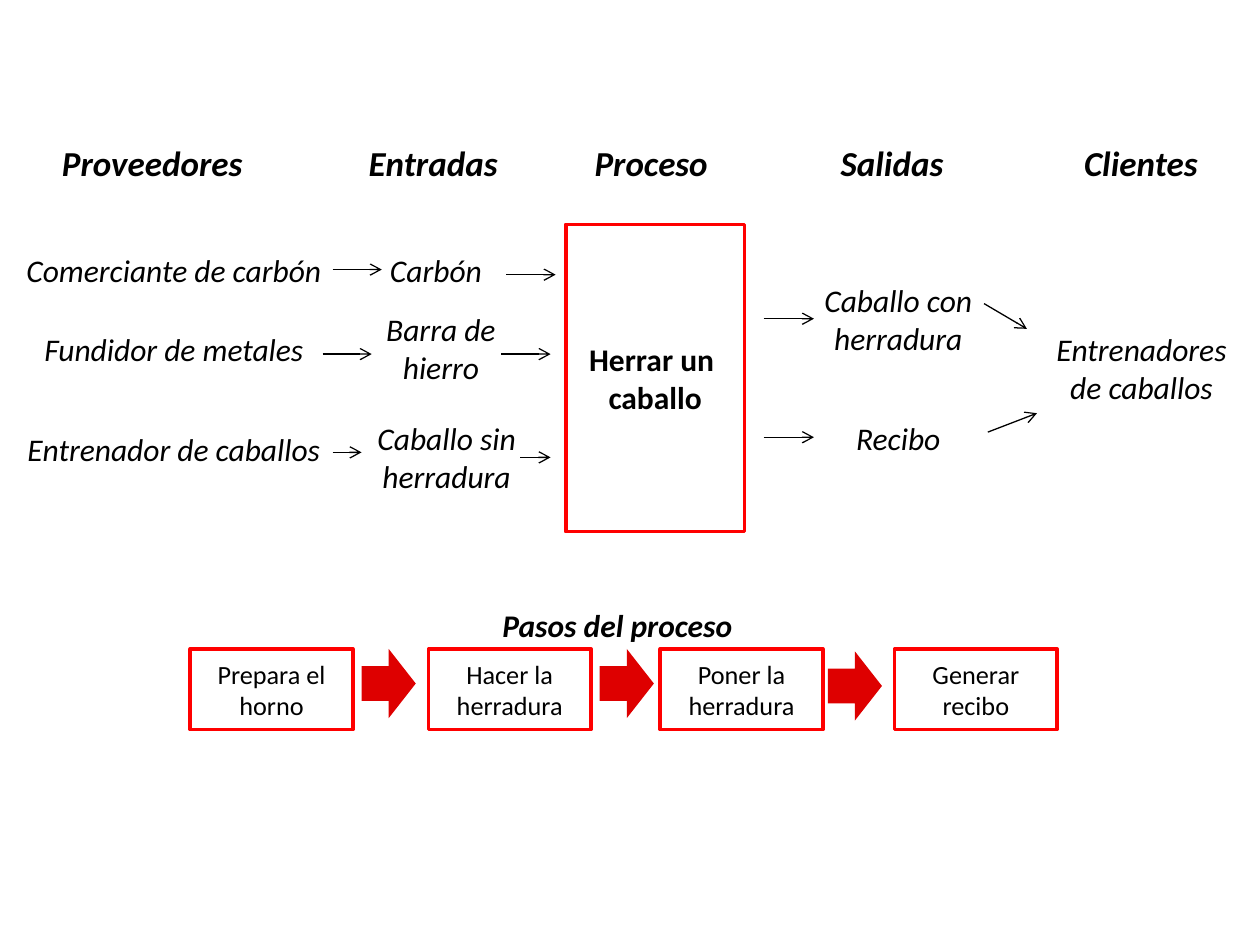
from lxml.etree import SubElement
from pptx import Presentation
from pptx.dml.color import RGBColor
from pptx.enum.shapes import MSO_CONNECTOR as Connector, MSO_SHAPE as Shape
from pptx.enum.text import MSO_ANCHOR as Anchor, PP_ALIGN as Align
from pptx.oxml.ns import qn
from pptx.util import Inches, Pt

WIDTH, HEIGHT = Inches(10), Inches(7.5)
BLACK, RED, DARK_RED = "000000", "FF0000", "DE0000"
HEADING_TOP, HEADING_HEIGHT = 14.27, 5.87
ONE_LINE, TWO_LINES = 5.33, 9.47
STEP_TOP = 68.67

HEADINGS = [
    ("Proveedores ", 3.4, 18), ("Entradas ", 27.2, 15), ("Proceso ", 44.5, 15),
    ("Salidas ", 65.5, 10.6), ("Clientes", 84.7, 11.7),
]
ITEMS = [
    ("Comerciante de carbón", 0.4, 25.87, 26.8, ONE_LINE),
    ("Fundidor de metales", 0.4, 34.27, 26.8, ONE_LINE),
    ("Entrenador de caballos", 0.4, 44.8, 26.8, ONE_LINE),
    ("Carbón", 29.5, 25.87, 10.2, ONE_LINE),
    ("Barra de hierro", 28.7, 32.13, 12.6, TWO_LINES),
    ("Caballo sin herradura", 27.2, 43.73, 16.5, TWO_LINES),
    ("Caballo con herradura", 64.3, 29.07, 14, TWO_LINES),
    ("Recibo", 64.3, 43.73, 14, ONE_LINE),
    ("Entrenadores de caballos", 82.4, 34.27, 16.4, TWO_LINES),
]
FLOWS = [
    (26.4, 28.53, 30.3, 28.53), (25.6, 37.47, 29.5, 37.47), (26.4, 47.87, 28.7, 47.87),
    (40.2, 29.07, 44.1, 29.07), (39.8, 37.47, 43.7, 37.47), (41.3, 48.4, 43.7, 48.4),
    (60.6, 33.73, 64.6, 33.73), (60.6, 46.27, 64.6, 46.27),
    (78.1, 32.13, 81.5, 34.8), (78.4, 45.73, 82.3, 43.73),
]
STEPS = [
    ("Prepara el horno", 15.1), ("Hacer la herradura", 34),
    ("Poner la herradura", 52.4), ("Generar recibo", 71),
]
STEP_ARROWS = [(28.7, STEP_TOP), (47.6, STEP_TOP), (65.7, 68.93)]


def color(value):
    return RGBColor.from_string(value)


def place(x, y, *size):
    shares = (x, y, *size)
    return [round((HEIGHT if index % 2 else WIDTH) * share / 100)
            for index, share in enumerate(shares)]


def write(shape, text, size, bold=False, italic=False):
    text_frame = shape.text_frame
    text_frame.text = text
    text_frame.word_wrap = True
    for paragraph in text_frame.paragraphs:
        paragraph.alignment = Align.CENTER
        for run in paragraph.runs:
            font = run.font
            font.name, font.size = "Calibri", Pt(size)
            font.bold, font.italic = bold, italic
            font.color.rgb = color(BLACK)


def add_label(slide, text, box, size=18, bold=False):
    write(slide.shapes.add_textbox(*place(*box)), text, size, bold, True)


def add_box(slide, text, box, size, bold=False):
    shape = slide.shapes.add_shape(Shape.RECTANGLE, *place(*box))
    shape.shadow.inherit = False
    shape.fill.background()
    shape.line.color.rgb = color(RED)
    shape.line.width = Pt(2)
    shape.text_frame.vertical_anchor = Anchor.MIDDLE
    write(shape, text, size, bold)


def add_block_arrow(slide, box):
    shape = slide.shapes.add_shape(Shape.RIGHT_ARROW, *place(*box))
    shape.shadow.inherit = False
    shape.fill.solid()
    shape.fill.fore_color.rgb = color(DARK_RED)
    shape.line.fill.background()


def add_flow(slide, ends):
    connector = slide.shapes.add_connector(Connector.STRAIGHT, *place(*ends))
    connector.line.color.rgb = color(BLACK)
    connector.line.width = Pt(0.75)
    SubElement(connector.line._get_or_add_ln(), qn("a:tailEnd"), type="arrow")
    SubElement(connector._element.spPr, qn("a:effectLst"))


def main():
    presentation = Presentation()
    presentation.slide_width, presentation.slide_height = WIDTH, HEIGHT
    slide = presentation.slides.add_slide(presentation.slide_layouts[6])

    for text, left, width in HEADINGS:
        add_label(slide, text, (left, HEADING_TOP, width, HEADING_HEIGHT), 20, True)
    for text, *box in ITEMS:
        add_label(slide, text, box)
    add_box(slide, "Herrar un \ncaballo", (44.9, 23.73, 14.2, 32.53), 18, True)
    for ends in FLOWS:
        add_flow(slide, ends)

    add_label(slide, "Pasos del proceso", (38.5, 63.47, 21, ONE_LINE), bold=True)
    for text, left in STEPS:
        add_box(slide, text, (left, STEP_TOP, 12.9, 8.53), 15)
    for left, top in STEP_ARROWS:
        add_block_arrow(slide, (left, top, 4.3, 7.33))

    presentation.save("out.pptx")


if __name__ == "__main__":
    main()
